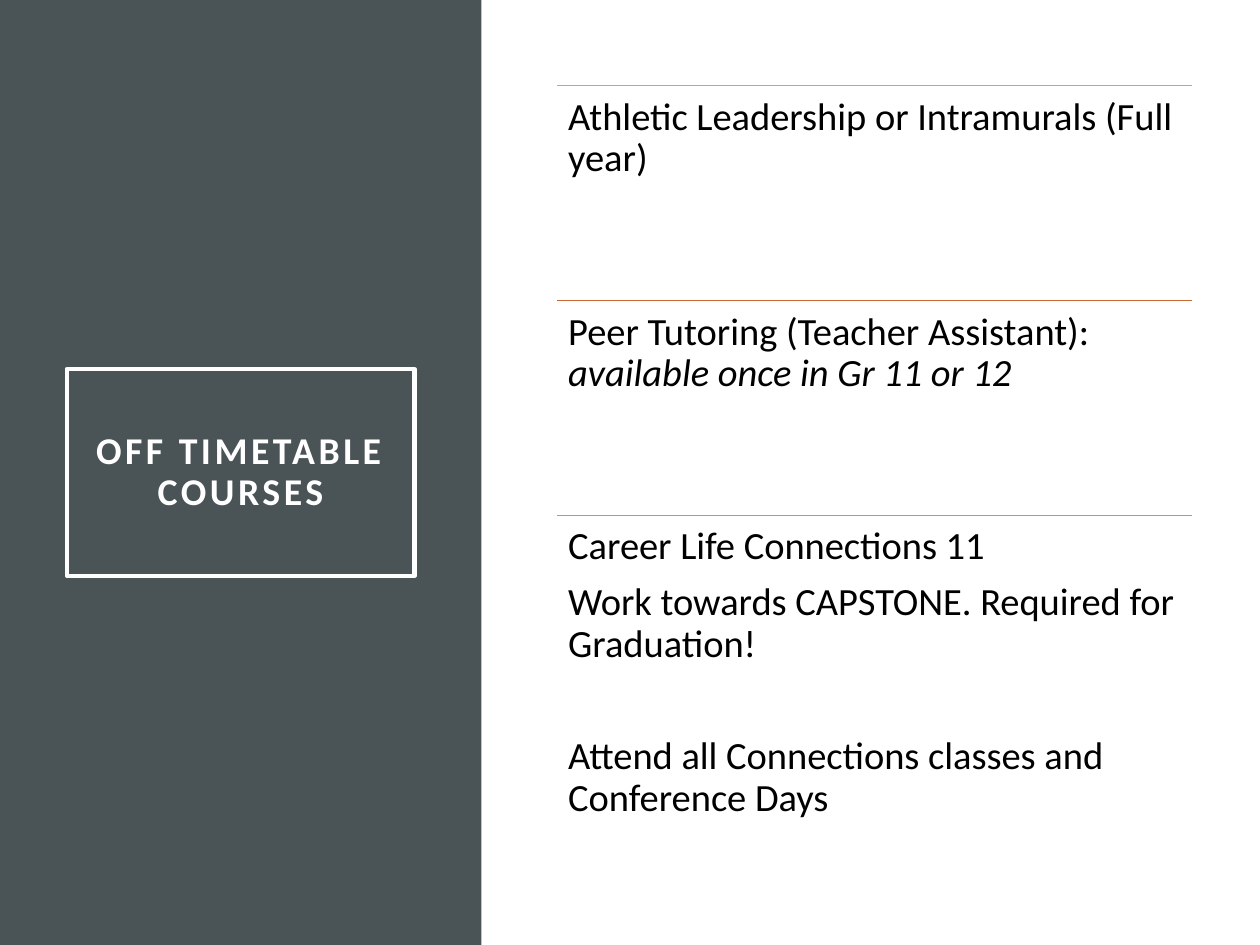
from dataclasses import dataclass

from pptx import Presentation
from pptx.dml.color import RGBColor
from pptx.enum.shapes import MSO_CONNECTOR, MSO_SHAPE
from pptx.enum.text import MSO_ANCHOR, MSO_AUTO_SIZE, PP_ALIGN
from pptx.oxml.ns import qn
from pptx.oxml.xmlchemy import OxmlElement
from pptx.slide import Slide
from pptx.util import Inches, Pt

COLORS = {
    "panel": "4A5356",
    "white": "FFFFFF",
    "text": "000000",
    "blue_gray": "9BAFB5",
    "orange": "C96731",
    "sage": "9CA383",
}
FONT = "Calibri"
LEFT, TOP, WIDTH, STEP = 4.42, 0.68, 5.04, 1.705


@dataclass
class Line:
    text: str
    emphasis: str = ""
    space_before: float = 0


@dataclass
class Course:
    rule_color: str
    lines: list[Line]
    height: float = 1.71


COURSES = [
    Course("blue_gray", [Line("Athletic Leadership or Intramurals (Full year)")]),
    Course("orange", [Line("Peer Tutoring (Teacher Assistant): ",
                           emphasis="available once in Gr 11 or 12")]),
    Course("sage", [
        Line("Career Life Connections 11"),
        Line("Work towards CAPSTONE. Required for Graduation!"),
        Line("Attend all Connections classes and Conference Days", space_before=32.5),
    ], height=2.51),
]


def rgb(name: str) -> RGBColor:
    return RGBColor.from_string(COLORS[name])


def set_margins(frame, inset: float) -> None:
    frame.margin_left = frame.margin_right = Inches(inset)
    frame.margin_top = frame.margin_bottom = Inches(inset)


def style_paragraph(paragraph, size: float, color: str) -> None:
    paragraph.line_spacing = 0.9
    paragraph.font.name = FONT
    paragraph.font.size = Pt(size)
    paragraph.font.color.rgb = rgb(color)


def add_panel(slide: Slide, height: int) -> None:
    panel = slide.shapes.add_shape(MSO_SHAPE.RECTANGLE, 0, 0, Inches(3.82), height)
    panel.shadow.inherit = False
    panel.fill.solid()
    panel.fill.fore_color.rgb = rgb("panel")
    panel.line.fill.background()


def place_title(slide: Slide) -> None:
    """Format the title placeholder and bring it in front of the panel."""
    title = slide.shapes.title
    title.left, title.top = Inches(0.53), Inches(2.93)
    title.width, title.height = Inches(2.76), Inches(1.64)
    title.line.color.rgb = rgb("white")
    title.line.width = Pt(2.5)
    frame = title.text_frame
    frame.text = "OFF TIMETABLE COURSES"
    frame.word_wrap = True
    frame.auto_size = MSO_AUTO_SIZE.NONE
    frame.vertical_anchor = MSO_ANCHOR.MIDDLE
    set_margins(frame, 0.2)
    heading = frame.paragraphs[0]
    heading.alignment = PP_ALIGN.CENTER
    style_paragraph(heading, 21.6, "white")
    heading.font.bold = True
    heading.runs[0].font.bold = True
    heading.runs[0].font._element.set("spc", "200")
    title.element.getparent().append(title.element)


def add_rule(slide: Slide, top: float, color: str) -> None:
    rule = slide.shapes.add_connector(
        MSO_CONNECTOR.STRAIGHT,
        Inches(LEFT), Inches(top), Inches(LEFT + WIDTH), Inches(top))
    rule.line.color.rgb = rgb(color)
    rule.line.width = Pt(0.5)
    rule.element.find(qn("p:spPr")).append(OxmlElement("a:effectLst"))


def add_course(slide: Slide, course: Course, top: float) -> None:
    add_rule(slide, top, course.rule_color)
    box = slide.shapes.add_textbox(
        Inches(LEFT), Inches(top), Inches(WIDTH), Inches(course.height))
    frame = box.text_frame
    frame.word_wrap = True
    set_margins(frame, 0.09)
    for index, line in enumerate(course.lines):
        paragraph = frame.add_paragraph() if index else frame.paragraphs[0]
        paragraph.add_run().text = line.text
        if line.emphasis:
            emphasis = paragraph.add_run()
            emphasis.text = line.emphasis
            emphasis.font.italic = True
        if line.space_before:
            paragraph.space_before = Pt(line.space_before)
        paragraph.space_after = Pt(8)
        style_paragraph(paragraph, 22, "text")


def main() -> None:
    deck = Presentation()
    deck.slide_width, deck.slide_height = Inches(10), Inches(7.5)
    slide = deck.slides.add_slide(deck.slide_layouts.get_by_name("Title Only"))
    add_panel(slide, deck.slide_height)
    place_title(slide)
    for index, course in enumerate(COURSES):
        add_course(slide, course, TOP + index * STEP)
    deck.save("out.pptx")


if __name__ == "__main__":
    main()
